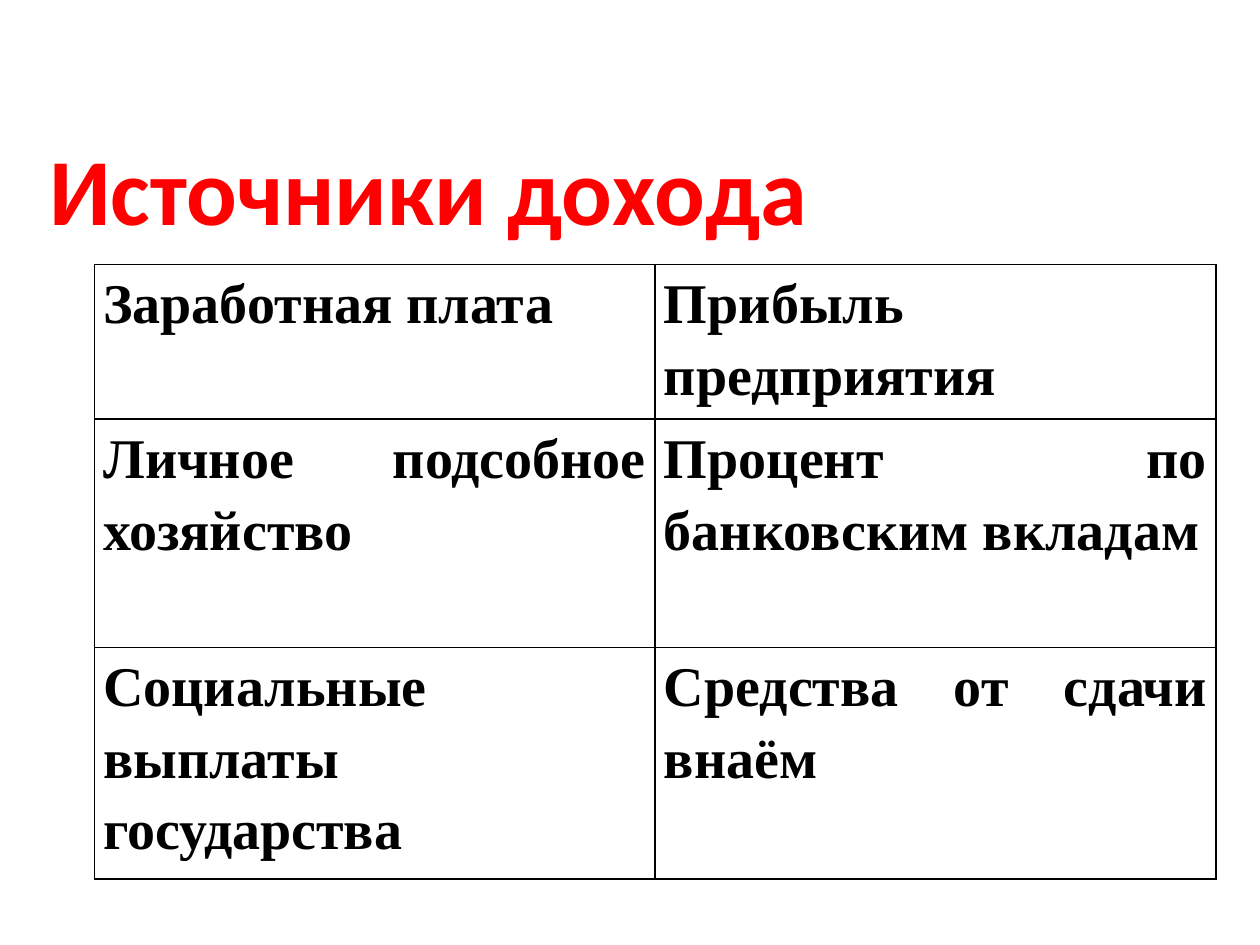
import pptx
import pptx.util
import pptx.dml.color
import pptx.enum.text
import pptx.oxml
import pptx.oxml.ns

Inches = pptx.util.Inches
Pt = pptx.util.Pt
RGBColor = pptx.dml.color.RGBColor
ALIGN = pptx.enum.text.PP_ALIGN
ANCHOR = pptx.enum.text.MSO_ANCHOR

RED = RGBColor(0xFF, 0x00, 0x00)
BLACK = RGBColor(0x00, 0x00, 0x00)


def write(frame, text, font, size, color, align, spacing=1.0):
    para = frame.paragraphs[0]
    para.alignment = align
    para.line_spacing = spacing
    run = para.add_run()
    run.text = text
    run.font.name = font
    run.font.size = Pt(size)
    run.font.bold = True
    run.font.color.rgb = color


def border(cell, color, width):
    props = cell._tc.get_or_add_tcPr()
    for place, side in enumerate(("lnL", "lnR", "lnT", "lnB")):
        line = pptx.oxml.parse_xml(
            f'<a:{side} {pptx.oxml.ns.nsdecls("a")} w="{Pt(width)}">'
            f'<a:solidFill><a:srgbClr val="{color}"/></a:solidFill></a:{side}>')
        props.insert(place, line)


deck = pptx.Presentation()
deck.slide_width = Inches(10)
deck.slide_height = Inches(7.5)
slide = deck.slides.add_slide(deck.slide_layouts[5])

# Title
title = slide.shapes.title
title.left, title.top = Inches(0.28), Inches(0.99)
title.width, title.height = Inches(6.24), Inches(1.01)
frame = title.text_frame
frame.word_wrap = False
frame.auto_size = pptx.enum.text.MSO_AUTO_SIZE.SHAPE_TO_FIT_TEXT
frame.vertical_anchor = ANCHOR.TOP
write(frame, "Источники дохода", font="Calibri", size=54, color=RED,
      align=ALIGN.CENTER)

# Table of income sources
SOURCES = [
    ("Заработная плата", "Прибыль предприятия"),
    ("Личное подсобное хозяйство", "Процент по банковским вкладам"),
    ("Социальные выплаты государства", "Средства от сдачи внаём"),
]
HEIGHTS = (0.87, 1.81, 1.81)

table = slide.shapes.add_table(
    len(SOURCES), 2, Inches(0.75), Inches(2.1),
    Inches(8.9), Inches(sum(HEIGHTS))).table
table.first_row = False
table.horz_banding = False

for row, height, texts in zip(table.rows, HEIGHTS, SOURCES):
    row.height = Inches(height)
    for cell, text in zip(row.cells, texts):
        cell.margin_left = cell.margin_right = Inches(0.07)
        cell.margin_top = cell.margin_bottom = 0
        cell.fill.background()
        border(cell, BLACK, 1)
        write(cell.text_frame, text, font="Times New Roman", size=32,
              color=BLACK, align=ALIGN.JUSTIFY, spacing=1.15)

deck.save("out.pptx")
